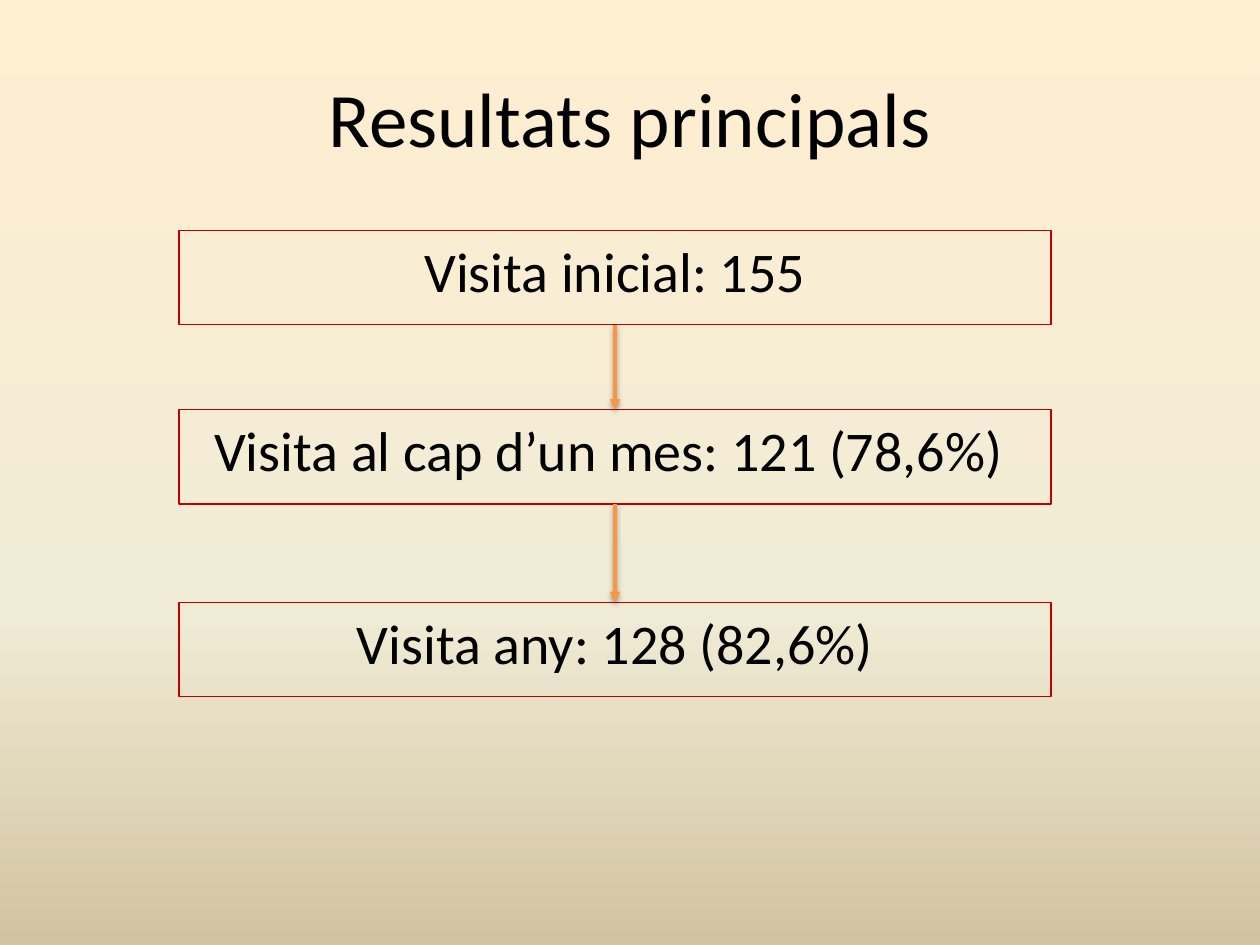
import lxml.etree
import pptx
import pptx.dml.color
import pptx.enum.shapes
import pptx.enum.text
import pptx.oxml
import pptx.oxml.ns
import pptx.util

Cm = pptx.util.Cm
Pt = pptx.util.Pt
RGBColor = pptx.dml.color.RGBColor
qn = pptx.oxml.ns.qn
SubElement = lxml.etree.SubElement

BLACK = RGBColor(0x00, 0x00, 0x00)
RED = RGBColor(0xC0, 0x00, 0x00)
ORANGE = RGBColor(0xF7, 0x96, 0x46)
CREAM = RGBColor(0xFF, 0xEF, 0xD1)
IVORY = RGBColor(0xF0, 0xEB, 0xD5)
SAND = RGBColor(0xD1, 0xC3, 0x9F)

VISITS = [
    ("Visita inicial: 155", 4.65),
    ("Visita al cap d’un mes: 121 (78,6%) ", 8.26),
    ("Visita any: 128 (82,6%)", 12.14),
]


def write_text(frame, text, size, anchor, color=BLACK, font="Calibri"):
    frame.word_wrap = True
    frame.vertical_anchor = anchor
    paragraph = frame.paragraphs[0]
    paragraph.alignment = pptx.enum.text.PP_ALIGN.CENTER
    run = paragraph.add_run()
    run.text = text
    run.font.size = Pt(size)
    run.font.name = font
    run.font.color.rgb = color


def paint_background(slide):
    fill = slide.background.fill
    fill.gradient()
    fill.gradient_angle = 270
    stops = next(slide.element.iter(qn("a:gsLst")))
    for stop in list(stops):
        stops.remove(stop)
    for position, color in ((0, CREAM), (65, IVORY), (100, SAND)):
        stop = SubElement(stops, qn("a:gs"), pos=str(position * 1000))
        SubElement(stop, qn("a:srgbClr"), val=str(color))


def add_title(slide, left, top, width, height):
    title = slide.shapes.add_textbox(left, top, width, height)
    write_text(title.text_frame, "Resultats principals", 44,
               pptx.enum.text.MSO_ANCHOR.MIDDLE)


def add_visit(slide, text, left, top, width, height):
    visit = slide.shapes.add_shape(
        pptx.enum.shapes.MSO_SHAPE.RECTANGLE, left, top, width, height)
    visit.shadow.inherit = False
    visit.fill.background()
    visit.line.color.rgb = RED
    visit.line.width = Pt(0.75)
    write_text(visit.text_frame, text, 32, pptx.enum.text.MSO_ANCHOR.TOP)
    return visit


def add_arrow(slide, upper, lower):
    center = upper.left + upper.width // 2
    arrow = slide.shapes.add_connector(
        pptx.enum.shapes.MSO_CONNECTOR.STRAIGHT,
        center, upper.top + upper.height, center, lower.top)
    arrow.line.color.rgb = ORANGE
    arrow.line.width = Pt(2)
    SubElement(arrow.line._get_or_add_ln(), qn("a:tailEnd"), type="triangle")
    effects = SubElement(arrow._element.spPr, qn("a:effectLst"))
    shadow = SubElement(effects, qn("a:outerShdw"), blurRad="40000",
                        dist="20000", dir="5400000", rotWithShape="0")
    shade = SubElement(shadow, qn("a:srgbClr"), val=str(BLACK))
    SubElement(shade, qn("a:alpha"), val="38000")


def add_visit_flow(slide, left, width, height):
    visits = [add_visit(slide, text, left, Cm(top), width, height)
              for text, top in VISITS]
    for upper, lower in zip(visits, visits[1:]):
        add_arrow(slide, upper, lower)


def main():
    deck = pptx.Presentation()
    deck.slide_width = Cm(25.4)
    deck.slide_height = Cm(19.05)
    slide = deck.slides.add_slide(deck.slide_layouts[6])
    paint_background(slide)
    add_title(slide, Cm(1.27), Cm(0.76), Cm(22.86), Cm(3.18))
    add_visit_flow(slide, Cm(3.61), Cm(17.58), Cm(1.9))
    deck.save("out.pptx")


if __name__ == "__main__":
    main()
